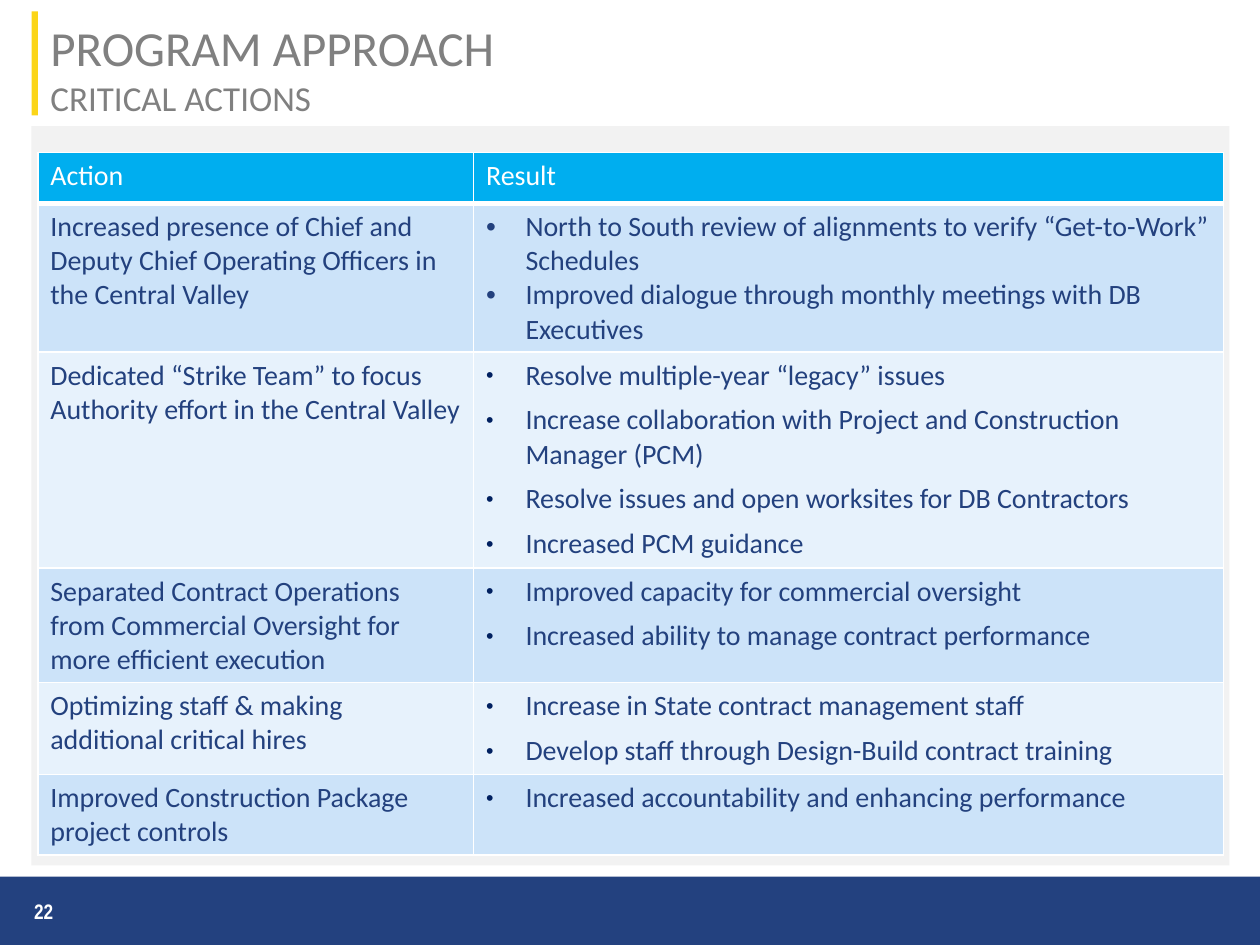
from dataclasses import dataclass

from pptx import Presentation
from pptx.dml.color import RGBColor
from pptx.enum import shapes, text
from pptx.oxml.ns import qn
from pptx.util import Pt
from lxml import etree


@dataclass(frozen=True)
class Theme:
    navy: str = "23417F"
    body: str = "23417E"
    bullet: str = "002060"
    yellow: str = "FBD518"
    panel: str = "F2F2F2"
    gray: str = "808080"
    header: str = "00AEEF"
    bands: tuple = ("CCE3F9", "E7F2FC")
    white: str = "FFFFFF"
    font: str = "Calibri"
    number_font: str = "Arial Narrow"
    title_size: int = 28
    subtitle_size: int = 20
    table_size: int = 16
    number_size: int = 12


THEME = Theme()
BULLET_INDENT = 22.5
COLUMN_WIDTHS = (249, 428.5)
HEADINGS = ("Action", "Result")
HEADER_HEIGHT = 29
ACTIONS = [
    (85, "Increased presence of Chief and Deputy Chief Operating Officers in the Central Valley",
     ["North to South review of alignments to verify “Get-to-Work” Schedules",
      "Improved dialogue through monthly meetings with DB Executives"]),
    (123.5, "Dedicated “Strike Team” to focus Authority effort in the Central Valley",
     ["Resolve multiple-year “legacy” issues",
      "Increase collaboration with Project and Construction Manager (PCM)",
      "Resolve issues and open worksites for DB Contractors",
      "Increased PCM guidance"]),
    (65.5, "Separated Contract Operations from Commercial Oversight for more efficient execution",
     ["Improved capacity for commercial oversight",
      "Increased ability to manage contract performance"]),
    (52.5, "Optimizing staff & making additional critical hires",
     ["Increase in State contract management staff",
      "Develop staff through Design-Build contract training"]),
    (46, "Improved Construction Package project controls",
     ["Increased accountability and enhancing performance"]),
]


def add_text(paragraph, content, size=THEME.table_size, color=THEME.body,
             font=THEME.font, bold=False):
    run = paragraph.add_run()
    run.text = content
    run.font.size = Pt(size)
    run.font.name = font
    run.font.bold = bold
    run.font.color.rgb = RGBColor.from_string(color)


def add_panel(slide, box, color):
    panel = slide.shapes.add_shape(shapes.MSO_SHAPE.RECTANGLE, *map(Pt, box))
    panel.shadow.inherit = False
    panel.fill.solid()
    panel.fill.fore_color.rgb = RGBColor.from_string(color)
    panel.line.fill.background()


def add_bullet(paragraph, small):
    props = paragraph._p.get_or_add_pPr()
    props.set("marL", str(Pt(BULLET_INDENT)))
    props.set("indent", str(-Pt(BULLET_INDENT)))
    if small:
        color = etree.SubElement(props, qn("a:buClr"))
        etree.SubElement(color, qn("a:srgbClr"), val=THEME.bullet)
        etree.SubElement(props, qn("a:buSzPct"), val="76000")
    etree.SubElement(props, qn("a:buFont"), typeface="Arial")
    etree.SubElement(props, qn("a:buChar"), char="•")


def style_cell(cell, color, bottom=1):
    props = cell._tc.get_or_add_tcPr()
    for side, width in (("L", 1), ("R", 1), ("T", 1), ("B", bottom)):
        border = etree.SubElement(props, qn(f"a:ln{side}"), w=str(Pt(width)))
        fill = etree.SubElement(border, qn("a:solidFill"))
        etree.SubElement(fill, qn("a:srgbClr"), val=THEME.white)
    cell.fill.solid()
    cell.fill.fore_color.rgb = RGBColor.from_string(color)


def add_results(cell, results, small, gap):
    for index, result in enumerate(results):
        paragraph = cell.text_frame.add_paragraph() if index else cell.text_frame.paragraphs[0]
        add_bullet(paragraph, small)
        if index:
            paragraph.space_before = Pt(gap)
        add_text(paragraph, result)


def add_heading(slide, box):
    left, top, width, height = box
    bar_width = 3.6
    add_panel(slide, (left, top, bar_width, height), THEME.yellow)
    title = slide.shapes.title
    title.left, title.top = Pt(left + bar_width), Pt(top)
    title.width, title.height = Pt(width - bar_width), Pt(height)
    frame = title.text_frame
    frame.auto_size = text.MSO_AUTO_SIZE.NONE
    frame.vertical_anchor = text.MSO_ANCHOR.TOP
    paragraph = frame.paragraphs[0]
    paragraph.alignment = text.PP_ALIGN.LEFT
    add_text(paragraph, "PROGRAM APPROACH", size=THEME.title_size, color=THEME.gray)
    paragraph.add_line_break()
    add_text(paragraph, "CRITICAL ACTIONS", size=THEME.subtitle_size, color=THEME.gray)


def add_actions(slide, box):
    left, top, width, height = box
    add_panel(slide, box, THEME.panel)
    heights = [HEADER_HEIGHT] + [action[0] for action in ACTIONS]
    table = slide.shapes.add_table(
        len(heights), len(COLUMN_WIDTHS), Pt(left + 3.6), Pt(top + 15.2),
        Pt(sum(COLUMN_WIDTHS)), Pt(sum(heights))).table
    for column, column_width in zip(table.columns, COLUMN_WIDTHS):
        column.width = Pt(column_width)
    for row, row_height in zip(table.rows, heights):
        row.height = Pt(row_height)
    for column, heading in enumerate(HEADINGS):
        cell = table.cell(0, column)
        style_cell(cell, THEME.header, bottom=3)
        add_text(cell.text_frame.paragraphs[0], heading, color=THEME.white)
    for index, (_, action, results) in enumerate(ACTIONS):
        action_cell, result_cell = table.rows[index + 1].cells
        for cell in (action_cell, result_cell):
            style_cell(cell, THEME.bands[index % 2])
        add_text(action_cell.text_frame.paragraphs[0], action)
        add_results(result_cell, results, small=index > 0, gap=6 if index else 0)


def add_footer(slide, box):
    left, top, width, height = box
    add_panel(slide, box, THEME.navy)
    number = slide.shapes.add_textbox(Pt(left), Pt(top), Pt(50), Pt(height))
    frame = number.text_frame
    frame.word_wrap = True
    frame.vertical_anchor = text.MSO_ANCHOR.MIDDLE
    paragraph = frame.paragraphs[0]
    paragraph.alignment = text.PP_ALIGN.CENTER
    add_text(paragraph, "22", size=THEME.number_size, color=THEME.white,
             font=THEME.number_font, bold=True)


def main():
    deck = Presentation()
    deck.slide_width, deck.slide_height = Pt(720), Pt(540)
    slide = deck.slides.add_slide(deck.slide_layouts[5])
    add_footer(slide, (0, 501, 720, 39))
    add_heading(slide, (18, 6.5, 624.5, 59.5))
    add_actions(slide, (18, 72, 684.5, 422.5))
    deck.save("out.pptx")


if __name__ == "__main__":
    main()
